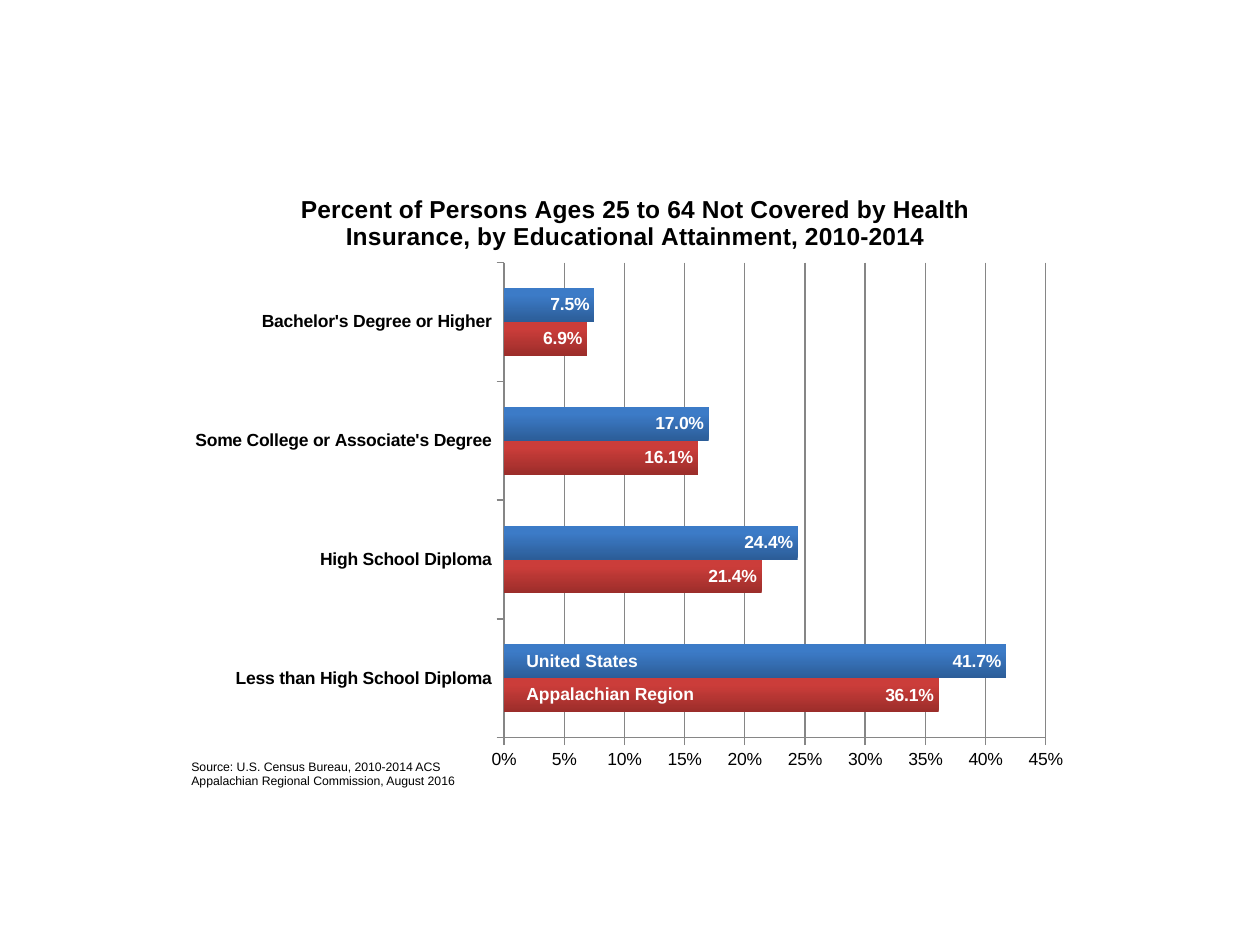
from lxml.etree import SubElement
from pptx import Presentation
from pptx.chart.data import CategoryChartData
from pptx.dml.color import RGBColor
from pptx.enum.chart import XL_CHART_TYPE, XL_LABEL_POSITION, XL_TICK_MARK
from pptx.oxml import parse_xml
from pptx.oxml.ns import nsdecls, qn
from pptx.util import Pt

SCALE = 914400 / 126
FONT = "Arial"
TITLE = ("Percent of Persons Ages 25 to 64 Not Covered by Health Insurance, "
         "by Educational Attainment, 2010-2014")
CATEGORIES = ["Less than High School Diploma", "High School Diploma",
              "Some College or Associate's Degree", "Bachelor's Degree or Higher"]
SERIES = [
    ("Appalachian Region", [36.1, 21.4, 16.1, 6.9], ("9B2D2A", "CB3D3A")),
    ("United States", [41.7, 24.4, 17.0, 7.5], ("2C5D98", "3C7BC7")),
]
SOURCE = ["Source: U.S. Census Bureau, 2010-2014 ACS",
          "Appalachian Regional Commission, August 2016"]


def px(n):
    """Turn px into EMU."""
    return round(n * SCALE)


def rgb(value):
    """Turn a hex string into a colour."""
    return RGBColor.from_string(value)


def set_font(font, size, color="000000", bold=False):
    """Set the face, size, colour and weight of a font."""
    font.name, font.size, font.bold = FONT, Pt(size), bold
    font.color.rgb = rgb(color)


def set_line(line, color="868686"):
    """Draw a thin line in one colour."""
    line.color.rgb = rgb(color)
    line.width = Pt(0.75)


def set_layout(parent, index, **values):
    """Give a chart part a manual layout in fractions of the chart."""
    for old in parent.findall(qn("c:layout")):
        parent.remove(old)
    layout = parse_xml(f"<c:layout {nsdecls('c')}><c:manualLayout/></c:layout>")
    for tag, value in values.items():
        SubElement(layout[0], qn(f"c:{tag}")).set("val", str(value))
    parent.insert(index, layout)


def style_series(series, colors):
    """Fill a series with a gradient and label its bars."""
    fill = series.format.fill
    fill.gradient()
    fill.gradient_angle = 90
    for stop, color, position in zip(fill.gradient_stops, colors, (0, 0.8)):
        stop.color.rgb = rgb(color)
        stop.position = position
    series.invert_if_negative = False
    labels = series.data_labels
    labels.show_value = True
    labels.position = XL_LABEL_POSITION.INSIDE_END
    labels.number_format = r"0.0##\%"
    labels.number_format_is_linked = False
    set_font(labels.font, 10, "FFFFFF", True)


def style_axes(chart):
    """Set scale, ticks, grid and fonts of both axes."""
    value, category = chart.value_axis, chart.category_axis
    value.minimum_scale, value.maximum_scale, value.major_unit = 0, 45, 5
    value.tick_labels.number_format = r"0\%"
    value.tick_labels.number_format_is_linked = False
    value.has_major_gridlines = True
    set_line(value.major_gridlines.format.line)
    for axis, bold in ((value, False), (category, True)):
        axis.major_tick_mark = XL_TICK_MARK.OUTSIDE
        axis.minor_tick_mark = XL_TICK_MARK.NONE
        set_line(axis.format.line)
        set_font(axis.tick_labels.font, 10, bold=bold)


def add_bars(s, x, y, w, h):
    """Place the bar chart with its title."""
    data = CategoryChartData()
    data.categories = CATEGORIES
    for name, values, _ in SERIES:
        data.add_series(name, values)
    chart = s.shapes.add_chart(XL_CHART_TYPE.BAR_CLUSTERED,
                               px(x), px(y), px(w), px(h), data).chart
    set_font(chart.font, 10)
    chart.has_legend = False
    chart.has_title = True
    title = chart.chart_title
    title.include_in_layout = False
    p = title.text_frame.paragraphs[0]
    p.add_run().text = TITLE
    set_font(p.font, 14, bold=True)
    set_font(p.runs[0].font, 14, bold=True)
    plot = chart.plots[0]
    plot.gap_width, plot.overlap, plot.vary_by_categories = 150, 0, False
    for series, (_, _, colors) in zip(plot.series, SERIES):
        style_series(series, colors)
    style_axes(chart)
    set_layout(title._element, 1, xMode="edge", yMode="edge", x=0.13, y=0.04)
    set_layout(chart._chartSpace.chart.plotArea, 0, layoutTarget="inner",
               xMode="edge", yMode="edge", x=0.36, y=0.16, w=0.6, h=0.77)


def add_text(s, x, y, w, h, lines, size, color="000000", bold=False, top=6):
    """Place a text box with one paragraph for each line."""
    tf = s.shapes.add_textbox(px(x), px(y), px(w), px(h)).text_frame
    tf.word_wrap = True
    tf.margin_top = px(top)
    tf.text = "\n".join(lines)
    for p in tf.paragraphs:
        set_font(p.font, size, color, bold)


def add_insurance_panel(s, x, y, w, h):
    """Place the chart, its source and the names of the series."""
    add_bars(s, x, y, w, h)
    add_text(s, x, y + 573, 323, 63, SOURCE, 7, top=22)
    for (name, _, _), top in zip(SERIES, (513, 480)):
        add_text(s, x + 335, y + top, 231, 30, [name], 10, "FFFFFF", True)


def main():
    """Build and save the slide."""
    prs = Presentation()
    prs.slide_width, prs.slide_height = px(1260), px(945)
    s = prs.slides.add_slide(prs.slide_layouts[6])
    add_insurance_panel(s, 179, 164, 903, 617)
    prs.save("out.pptx")


if __name__ == "__main__":
    main()
